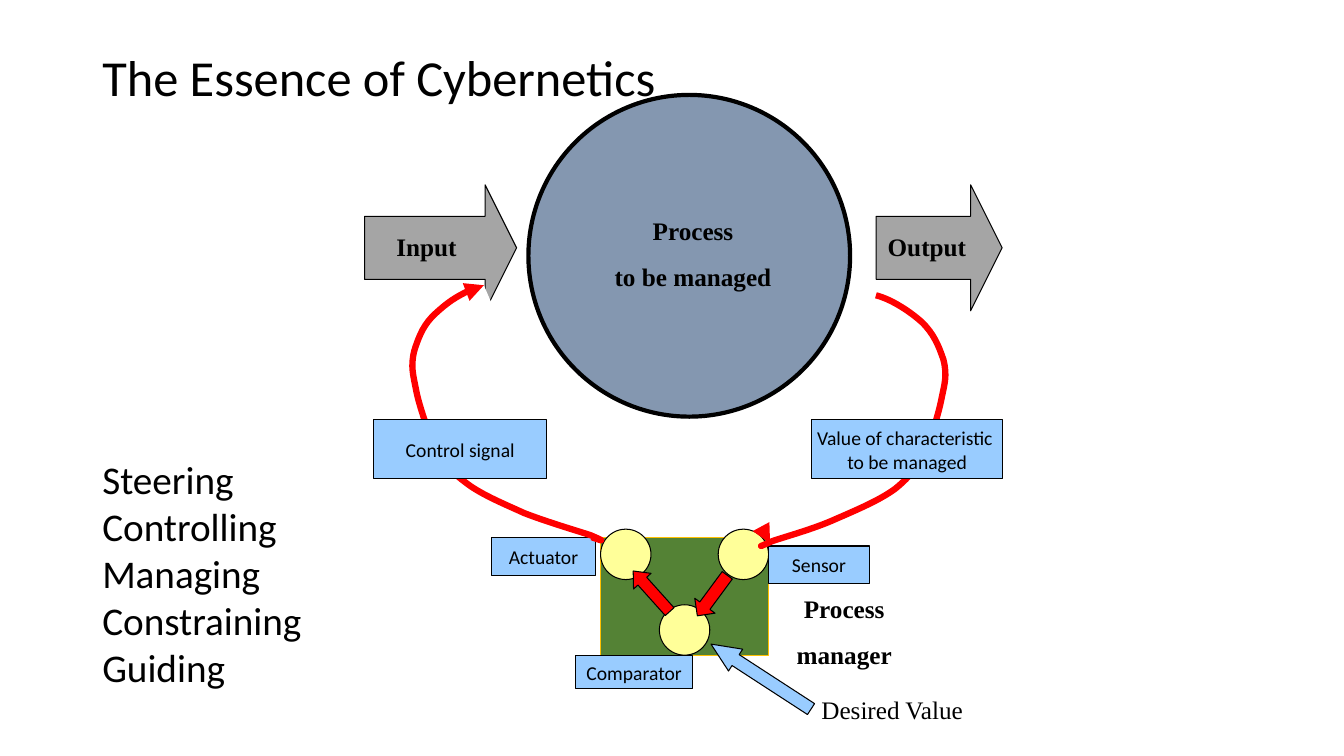
import pptx
import pptx.util
import pptx.dml.color
import pptx.enum.shapes
import pptx.enum.text
import pptx.oxml
import pptx.oxml.ns

SHAPES = pptx.enum.shapes.MSO_SHAPE
ALIGN = pptx.enum.text.PP_ALIGN
ANCHOR = pptx.enum.text.MSO_ANCHOR

# Places are (column, row, columns, rows) on a grid of 160 by 90 cells.
COLUMNS, ROWS = 160, 90
WIDTH, HEIGHT = pptx.util.Inches(13.333), pptx.util.Inches(7.5)
CELL = HEIGHT / ROWS

BLACK, WHITE, RED, YELLOW, BLUE = "000000", "FFFFFF", "FF0000", "FFFF99", "99CCFF"
GRAY, SLATE, GREEN, GOLD = "A5A5A5", "8497B0", "548235", "FFC000"
SERIF = "Times New Roman"

TITLE = ("The Essence of Cybernetics", (11, 4.8, 138, 9.5))
VERBS = ("Steering\nControlling\nManaging\nConstraining\nGuiding", (11, 53.6, 33.6, 29.5))

# kind, place, fill, line colour, line width
BLOCKS = [
    (SHAPES.RECTANGLE, (71.5, 64, 20, 14), GREEN, GOLD, 0.5),
    (SHAPES.OVAL, (62.9, 11.3, 38.3, 38.3), SLATE, BLACK, 3),
]
NODE_SIZE = 6
NODES = [(85.5, 63), (78.5, 72), (71.5, 63)]

# kind, place, fill, rotation, head length
ARROWS = [
    (SHAPES.RIGHT_ARROW, (43.4, 22, 18.1, 15), GRAY, 0, 0.25),
    (SHAPES.RIGHT_ARROW, (104.3, 22, 15, 15), GRAY, 0, 0.25),
    (SHAPES.DOWN_ARROW, (83.3, 67.9, 3, 6), RED, 36.4, 0.5),
    (SHAPES.LEFT_ARROW, (74.3, 69, 6.5, 2.8), RED, 48.1, 0.583),
    (SHAPES.LEFT_ARROW, (83.5, 79, 14.2, 3.1), BLUE, 33, 1.127),
]

NODE_LABELS = [
    ("Sensor", (91.5, 65, 12, 4.5)),
    ("Comparator", (68.5, 78, 14, 4)),
    ("Actuator", (58.5, 64, 12.4, 4.5)),
]
SIGNAL_LABELS = [
    ("Value of characteristic \nto be managed", (96.6, 50, 22.8, 7)),
    ("Control signal", (44.5, 50, 20.6, 7)),
]

CAPTIONS = [
    ("Input", (46, 27, 12.1, 4.8), ALIGN.LEFT),
    ("Output", (104.5, 27, 12, 4.8), ALIGN.LEFT),
    ("Process\nto be managed", (71.5, 25, 22, 10.3), ALIGN.CENTER),
    ("Process\nmanager", (89.5, 70, 22, 10.3), ALIGN.CENTER),
]
DESIRED = ("Desired Value", (96.6, 82, 21.2, 4.8))

# Arrow end, then the start and the three points of each curve, in inches.
LOOPS = [
    ("a:tailEnd", [
        (8.69, 2.93),
        (8.85, 2.97), (9.04, 3.1), (9.15, 3.2),
        (9.26, 3.31), (9.31, 3.42), (9.36, 3.57),
        (9.4, 3.73), (9.37, 3.81), (9.34, 3.96),
        (9.31, 4.11), (9.24, 4.33), (9.19, 4.46),
        (9.14, 4.59), (9.03, 4.73), (8.88, 4.85),
        (8.73, 4.96), (8.52, 5.05), (8.29, 5.15),
        (8.07, 5.25), (7.77, 5.33), (7.66, 5.37),
        (7.43, 5.47), (7.64, 5.39), (7.64, 5.39)]),
    ("a:headEnd", [
        (4.8, 2.83),
        (4.63, 2.87), (4.44, 3), (4.32, 3.11),
        (4.21, 3.21), (4.16, 3.32), (4.11, 3.48),
        (4.07, 3.64), (4.1, 3.72), (4.13, 3.88),
        (4.16, 4.03), (4.24, 4.25), (4.29, 4.39),
        (4.34, 4.52), (4.45, 4.66), (4.61, 4.78),
        (4.76, 4.9), (4.98, 4.99), (5.2, 5.09),
        (5.43, 5.18), (5.74, 5.27), (5.86, 5.31),
        (6.09, 5.41), (5.87, 5.33), (5.87, 5.33)]),
]


def rgb(code):
    return pptx.dml.color.RGBColor.from_string(code)


def cells(place):
    return [round(length * CELL) for length in place]


def paint(shape, fill, line=BLACK, width=0.75):
    shape.shadow.inherit = False
    shape.fill.solid()
    shape.fill.fore_color.rgb = rgb(fill)
    shape.line.color.rgb = rgb(line)
    shape.line.width = pptx.util.Pt(width)
    return shape


def add_block(page, kind, place, fill, line=BLACK, width=0.75):
    return paint(page.shapes.add_shape(kind, *cells(place)), fill, line, width)


def write(shape, text, size=18, font="Calibri", bold=False, align=ALIGN.LEFT,
          anchor=ANCHOR.TOP, before=0, spacing=1.0, wrap=True):
    frame = shape.text_frame
    frame.word_wrap = wrap
    frame.vertical_anchor = anchor
    for index, line in enumerate(text.split("\n")):
        para = frame.add_paragraph() if index else frame.paragraphs[0]
        para.alignment = align
        para.space_before = pptx.util.Pt(before)
        para.line_spacing = spacing
        span = para.add_run()
        span.text = line
        span.font.name = font
        span.font.size = pptx.util.Pt(size)
        span.font.bold = bold
        span.font.color.rgb = rgb(BLACK)


def add_text(page, text, place, **style):
    write(page.shapes.add_textbox(*cells(place)), text, **style)


def add_label(page, text, place):
    box = add_block(page, SHAPES.RECTANGLE, place, BLUE)
    write(box, text, size=14, align=ALIGN.CENTER, anchor=ANCHOR.MIDDLE,
          spacing=1.02, wrap=False)


def add_loop(page, arrow_end, points):
    """Draw a chain of Bezier curves: each three line segments become one curve."""
    start, *rest = [tuple(map(pptx.util.Inches, point)) for point in points]
    builder = page.shapes.build_freeform(*start)
    builder.add_line_segments(rest, close=False)
    loop = paint(builder.convert_to_shape(), WHITE, RED, 4.5)
    outline = next(loop.element.iter(pptx.oxml.ns.qn("a:path")))
    segments = outline.findall(pptx.oxml.ns.qn("a:lnTo"))
    for first in range(0, len(segments), 3):
        curve = outline.makeelement(pptx.oxml.ns.qn("a:cubicBezTo"))
        for segment in segments[first:first + 3]:
            curve.append(segment[0])
            outline.remove(segment)
        outline.append(curve)
    line = loop.line._get_or_add_ln()
    end = line.makeelement(pptx.oxml.ns.qn(arrow_end), {"type": "triangle"})
    line.append(end)


def main():
    deck = pptx.Presentation()
    deck.slide_width, deck.slide_height = WIDTH, HEIGHT
    page = deck.slides.add_slide(deck.slide_layouts[6])

    add_text(page, *TITLE, size=36, anchor=ANCHOR.MIDDLE, spacing=0.9)
    for block in BLOCKS:
        add_block(page, *block)
    for column, row in NODES:
        add_block(page, SHAPES.OVAL, (column, row, NODE_SIZE, NODE_SIZE), YELLOW)
    for label in NODE_LABELS:
        add_label(page, *label)
    for kind, place, fill, rotation, head in ARROWS:
        arrow = add_block(page, kind, place, fill)
        arrow.rotation = rotation
        arrow.adjustments[0] = 0.5
        arrow.adjustments[1] = head
    for text, place, align in CAPTIONS:
        add_text(page, text, place, font=SERIF, bold=True, align=align, before=11.2)
    add_text(page, *DESIRED, font=SERIF, spacing=1.02)
    for (arrow_end, points), label in zip(LOOPS, SIGNAL_LABELS):
        add_loop(page, arrow_end, points)
        add_label(page, *label)
    add_text(page, *VERBS, size=28)
    deck.save("out.pptx")


if __name__ == "__main__":
    main()
